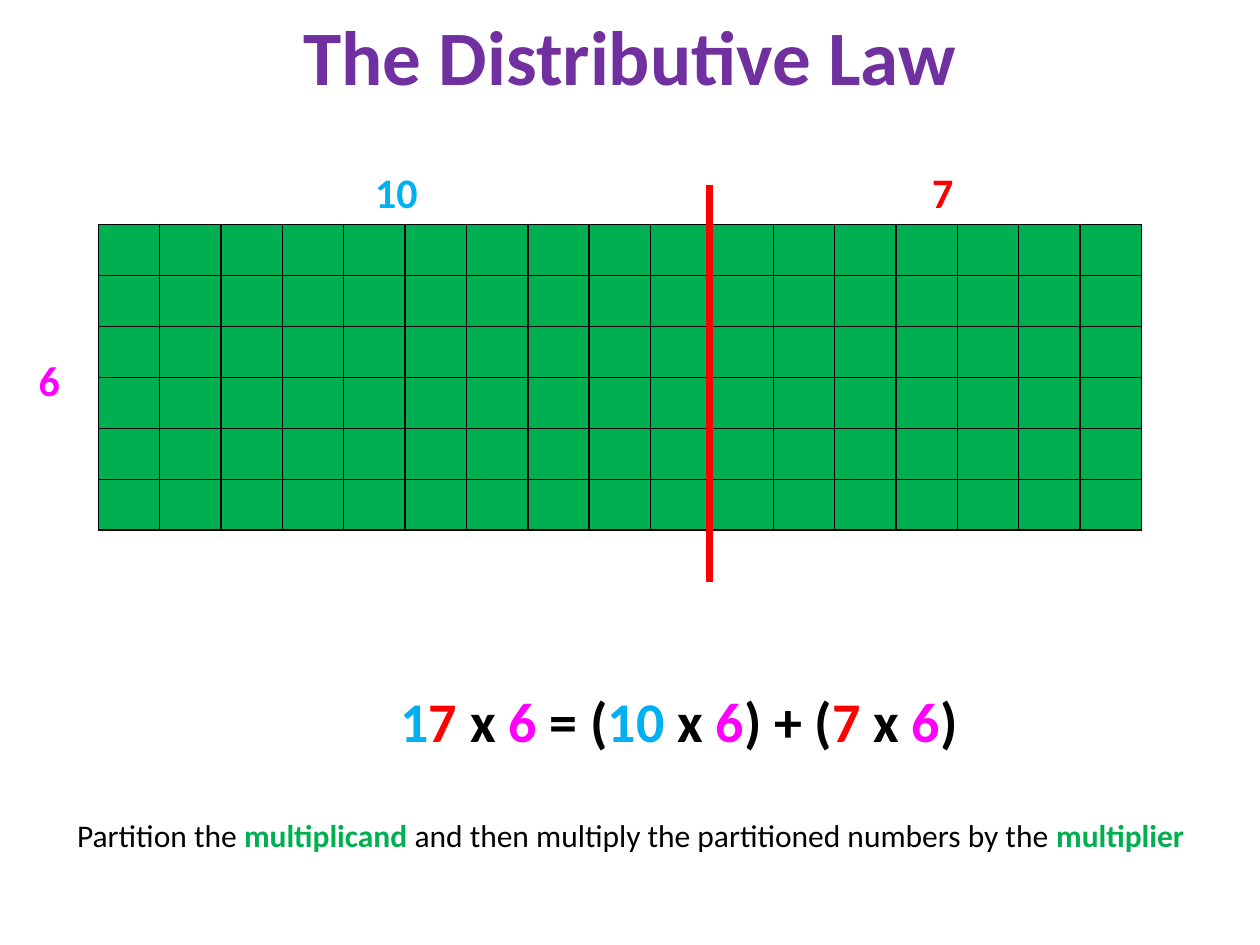
"""Build a slide that shows the distributive law on a grid of 17 by 6 cells."""
from typing import NamedTuple

from lxml.etree import SubElement
from pptx import Presentation
from pptx.dml.color import RGBColor
from pptx.enum.shapes import MSO_CONNECTOR
from pptx.enum.text import MSO_ANCHOR, MSO_AUTO_SIZE, PP_ALIGN
from pptx.oxml.ns import qn
from pptx.util import Inches, Pt

COLORS = {
    "title": "7030A0",
    "ten": "00B0F0",
    "seven": "FF0000",
    "six": "FF00FF",
    "green": "00B050",
    "black": "000000",
}
FONT = "Calibri"
COLUMNS, ROWS = 17, 6
GRID_LEFT, GRID_TOP = Inches(0.78), Inches(1.78)
COLUMN, ROW = Inches(8.28) // COLUMNS, Inches(2.43) // ROWS


class Piece(NamedTuple):
    text: str
    color: str
    bold: bool = True


class Box(NamedTuple):
    left: float
    top: float
    width: float
    height: float


class Label(NamedTuple):
    box: Box
    size: int
    pieces: tuple[Piece, ...]


ONE = Piece("1", "ten")
TEN = Piece("10", "ten")
SEVEN = Piece("7", "seven")
SIX = Piece("6", "six")
TIMES = Piece(" x ", "black")

TITLE = Label(Box(-0.06, -4.4, 17.45, 2.15), 44, (Piece("The Distributive Law", "title"),))
LABELS = (
    Label(Box(3.65, -1.26, 2.42, 1.23), 24, (TEN,)),
    Label(Box(-2.01, 2.44, 2.42, 1.23), 24, (SIX,)),
    Label(Box(12.55, -1.26, 2.42, 1.23), 24, (SEVEN,)),
    Label(Box(2.03, 8.94, 14.87, 1.58), 32, (
        ONE, SEVEN, TIMES, SIX, Piece(" = (", "black"),
        TEN, TIMES, SIX, Piece(") + (", "black"),
        SEVEN, TIMES, SIX, Piece(")", "black"),
    )),
    Label(Box(-1.19, 11.48, 19.73, 1), 18, (
        Piece("Partition the ", "black", False),
        Piece("multiplicand", "green"),
        Piece(" and then multiply the partitioned numbers by the ", "black", False),
        Piece("multiplier", "green"),
    )),
)


def color(name: str) -> RGBColor:
    return RGBColor.from_string(COLORS[name])


def grid_x(columns: float) -> int:
    return round(GRID_LEFT + columns * COLUMN)


def grid_y(rows: float) -> int:
    return round(GRID_TOP + rows * ROW)


def write_label(shape, label: Label) -> None:
    box = label.box
    shape.left, shape.top = grid_x(box.left), grid_y(box.top)
    shape.width, shape.height = round(box.width * COLUMN), round(box.height * ROW)
    frame = shape.text_frame
    frame.word_wrap = True
    frame.auto_size = MSO_AUTO_SIZE.NONE
    paragraph = frame.paragraphs[0]
    paragraph.alignment = PP_ALIGN.CENTER
    paragraph.font.name = FONT
    paragraph.font.size = Pt(label.size)
    for piece in label.pieces:
        run = paragraph.add_run()
        run.text = piece.text
        run.font.bold = piece.bold
        run.font.color.rgb = color(piece.color)


def style_cell(cell) -> None:
    cell.text_frame.paragraphs[0].font.size = Pt(12)
    properties = cell._tc.get_or_add_tcPr()
    for side in ("a:lnL", "a:lnR", "a:lnT", "a:lnB"):
        border = SubElement(properties, qn(side), w=str(Pt(1)))
        fill = SubElement(border, qn("a:solidFill"))
        SubElement(fill, qn("a:srgbClr"), val=COLORS["black"])
    cell.fill.solid()
    cell.fill.fore_color.rgb = color("green")


def add_grid(slide) -> None:
    table = slide.shapes.add_table(
        ROWS, COLUMNS, GRID_LEFT, GRID_TOP, COLUMN * COLUMNS, ROW * ROWS
    ).table
    for column in table.columns:
        column.width = COLUMN
    for row in table.rows:
        row.height = ROW
    for cell in table.iter_cells():
        style_cell(cell)


def add_divider(slide, column: float, top: float, bottom: float) -> None:
    divider = slide.shapes.add_connector(
        MSO_CONNECTOR.STRAIGHT,
        grid_x(column), grid_y(top), grid_x(column), grid_y(bottom),
    )
    divider.line.color.rgb = color("seven")
    divider.line.width = Pt(4.5)
    SubElement(divider._element.spPr, qn("a:effectLst"))


def main() -> None:
    presentation = Presentation()
    presentation.slide_width, presentation.slide_height = Inches(10), Inches(7.5)
    slide = presentation.slides.add_slide(presentation.slide_layouts[5])
    title = slide.shapes.title
    write_label(title, TITLE)
    title.text_frame.vertical_anchor = MSO_ANCHOR.MIDDLE
    add_grid(slide)
    add_divider(slide, 9.96, -0.77, 7.01)
    for label in LABELS:
        write_label(slide.shapes.add_textbox(0, 0, 0, 0), label)
    presentation.save("out.pptx")


if __name__ == "__main__":
    main()
